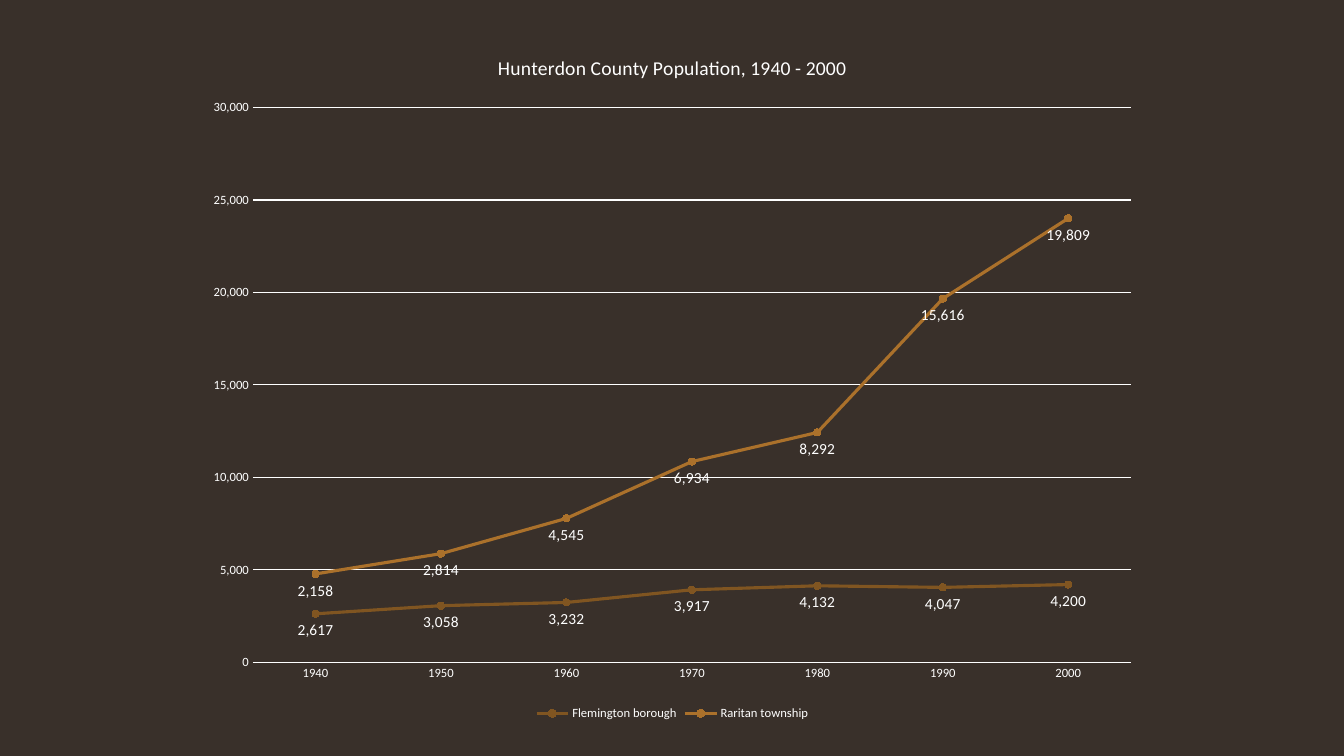
"""Build a slide with a stacked line chart of Hunterdon County population."""
from dataclasses import dataclass

from pptx import Presentation
from pptx.chart.chart import Chart
from pptx.chart.data import CategoryChartData
from pptx.chart.series import LineSeries
from pptx.dml.color import RGBColor
from pptx.enum.chart import (
    XL_CHART_TYPE,
    XL_LABEL_POSITION,
    XL_LEGEND_POSITION,
    XL_MARKER_STYLE,
    XL_TICK_MARK,
)
from pptx.dml.fill import FillFormat
from pptx.dml.line import LineFormat
from pptx.text.text import Font
from pptx.util import Pt

WHITE = "FFFFFF"
BACKGROUND = "39302A"
NUMBER_FORMAT = "#,##0"
TITLE = "Hunterdon County Population, 1940 - 2000"
YEARS = [str(year) for year in range(1940, 2001, 10)]


@dataclass(frozen=True)
class Municipality:
    name: str
    color: str
    population: tuple[int, ...]


MUNICIPALITIES = (
    Municipality("Flemington borough", "805521",
                 (2617, 3058, 3232, 3917, 4132, 4047, 4200)),
    Municipality("Raritan township", "AB712B",
                 (2158, 2814, 4545, 6934, 8292, 15616, 19809)),
)


def paint(fill: FillFormat, color: str) -> None:
    fill.solid()
    fill.fore_color.rgb = RGBColor.from_string(color)


def style_line(line: LineFormat, color: str, width: float) -> None:
    paint(line.fill, color)
    line.width = Pt(width)


def style_font(font: Font, size: float) -> None:
    font.name = "Calibri"
    font.size = Pt(size)
    font.bold = False
    paint(font.fill, WHITE)


def style_title(chart: Chart) -> None:
    chart.has_title = True
    para = chart.chart_title.text_frame.paragraphs[0]
    span = para.add_run()
    span.text = TITLE
    style_font(span.font, 14)
    chart.chart_title.include_in_layout = False


def style_axes(chart: Chart) -> None:
    for axis in (chart.category_axis, chart.value_axis):
        axis.major_tick_mark = XL_TICK_MARK.NONE
        axis.minor_tick_mark = XL_TICK_MARK.NONE
        style_font(axis.tick_labels.font, 9)
    style_line(chart.category_axis.format.line, WHITE, 0.75)
    values = chart.value_axis
    values.minimum_scale = 0
    values.maximum_scale = 30000
    values.major_unit = 5000
    values.format.line.fill.background()
    values.has_major_gridlines = True
    style_line(values.major_gridlines.format.line, WHITE, 0.75)
    values.tick_labels.number_format = NUMBER_FORMAT
    values.tick_labels.number_format_is_linked = False


def style_legend(chart: Chart) -> None:
    chart.has_legend = True
    chart.legend.position = XL_LEGEND_POSITION.BOTTOM
    chart.legend.include_in_layout = False
    style_font(chart.legend.font, 9)


def style_series(series: LineSeries, color: str) -> None:
    series.smooth = False
    style_line(series.format.line, color, 2.25)
    marker = series.marker
    marker.style = XL_MARKER_STYLE.CIRCLE
    marker.size = 5
    paint(marker.format.fill, color)
    style_line(marker.format.line, color, 0.75)
    labels = series.data_labels
    labels.show_value = True
    labels.position = XL_LABEL_POSITION.BELOW
    labels.number_format = NUMBER_FORMAT
    labels.number_format_is_linked = False
    style_font(labels.font, 11)


def main() -> None:
    deck = Presentation()
    deck.slide_width, deck.slide_height = Pt(960), Pt(540)
    page = deck.slides.add_slide(deck.slide_layouts[6])
    paint(page.background.fill, BACKGROUND)

    data = CategoryChartData(number_format=NUMBER_FORMAT)
    data.categories = YEARS
    for municipality in MUNICIPALITIES:
        data.add_series(municipality.name, municipality.population)
    chart = page.shapes.add_chart(
        XL_CHART_TYPE.LINE_MARKERS_STACKED,
        Pt(139), Pt(22.3), Pt(682.5), Pt(495.4), data,
    ).chart
    style_font(chart.font, 10)
    chart.plots[0].vary_by_categories = False
    style_title(chart)
    style_axes(chart)
    style_legend(chart)
    for series, municipality in zip(chart.plots[0].series, MUNICIPALITIES):
        style_series(series, municipality.color)

    deck.save("out.pptx")


if __name__ == "__main__":
    main()
